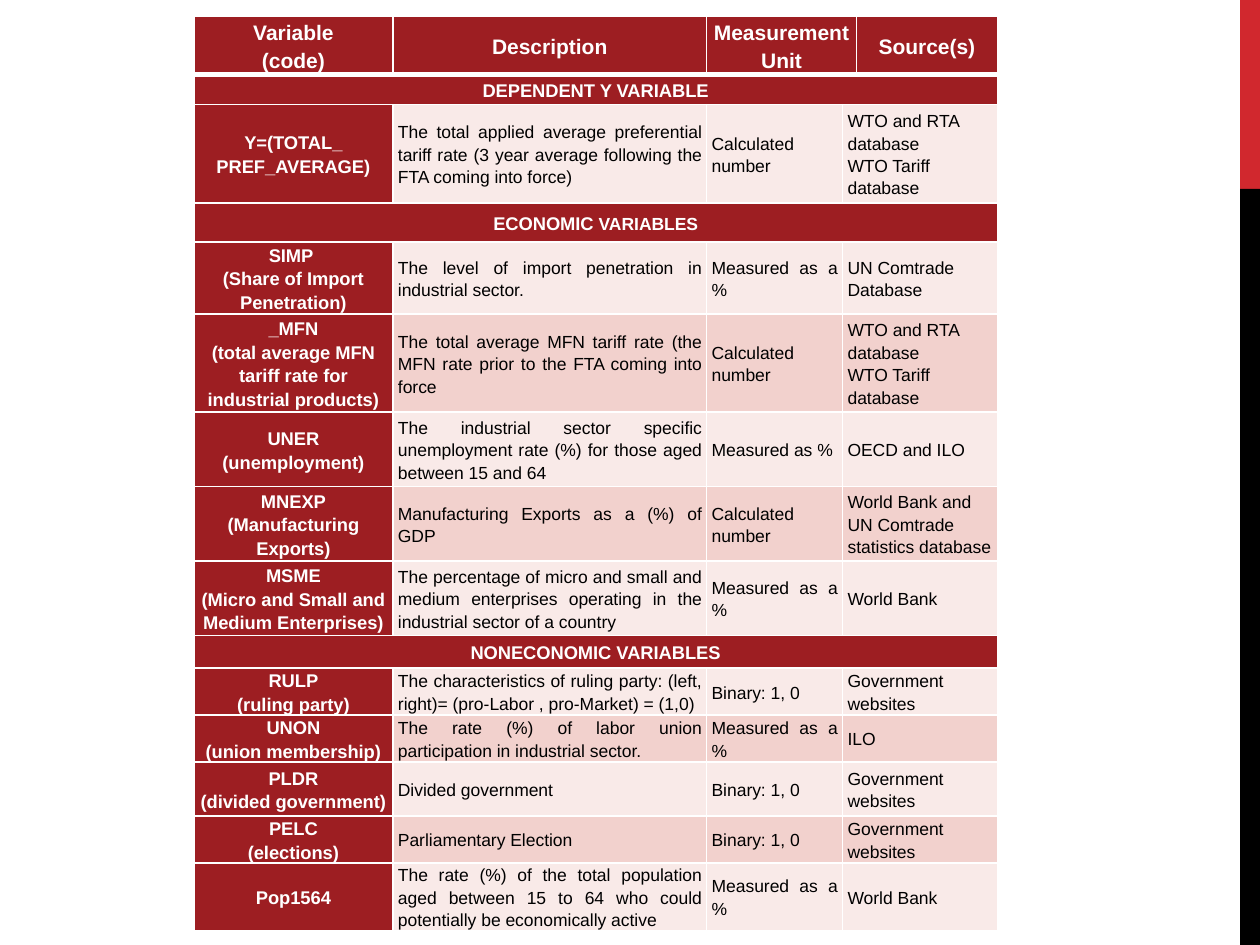
from lxml.etree import SubElement
from pptx import Presentation
from pptx.dml.color import RGBColor
from pptx.enum.shapes import MSO_SHAPE as Shape
from pptx.enum.text import MSO_ANCHOR as Anchor, PP_ALIGN as Align
from pptx.oxml.ns import qn
from pptx.util import Cm, Pt

WHITE, BLACK, RED, DARK_RED = "FFFFFF", "000000", "D1282E", "9D1E22"
BANDS = ("F9EAE8", "F2D1CD")
COLUMN_WIDTHS = (4.01, 6.32, 2.74, 0.28, 2.84)
HEADINGS = ("Variable\n(code)", "Description", "Measurement\nUnit", "Source(s)")
TRADE_SOURCES = "WTO and RTA database\nWTO Tariff database"
SECTIONS = (
    (0.61, (("DEPENDENT Y VARIABLE", 10.5),), (
        (1.98, "Y=(TOTAL_\nPREF_AVERAGE)",
         "The total applied average preferential tariff rate (3 year average following the FTA coming into force)",
         "Calculated number", TRADE_SOURCES),
    )),
    (0.79, (("ECONOMIC", 10.5), (" VARIABLES", 10)), (
        (1.45, "SIMP \n(Share of Import Penetration)",
         "The level of import penetration in industrial sector.",
         "Measured as a %", "UN Comtrade Database"),
        (1.98, "_MFN\n(total average MFN tariff rate for industrial products)",
         "The total average MFN tariff rate (the MFN rate prior to the FTA coming into force",
         "Calculated number", TRADE_SOURCES),
        (1.5, "UNER\n(unemployment)",
         "The industrial sector specific unemployment rate (%) for those aged between 15 and 64",
         "Measured as %", "OECD and ILO"),
        (1.5, "MNEXP\n(Manufacturing Exports)",
         "Manufacturing Exports as a (%) of GDP",
         "Calculated number", "World Bank and UN Comtrade statistics database"),
        (1.5, "MSME\n(Micro and Small and Medium Enterprises)",
         "The percentage of micro and small and medium enterprises operating in the industrial sector of a country",
         "Measured as a %", "World Bank"),
    )),
    (0.66, (("NONECONOMIC VARIABLES", 10.5),), (
        (0.94, "RULP\n(ruling party)",
         "The characteristics of ruling party: (left, right)= (pro-Labor , pro-Market) = (1,0)",
         "Binary: 1, 0", "Government websites"),
        (0.94, "UNON\n(union membership)",
         "The rate (%) of labor union participation in industrial sector.",
         "Measured as a %", "ILO"),
        (1.09, "PLDR\n(divided government)", "Divided government",
         "Binary: 1, 0", "Government websites"),
        (0.94, "PELC\n(elections)", "Parliamentary Election",
         "Binary: 1, 0", "Government websites"),
        (1.32, "Pop1564",
         "The rate (%) of the total population aged between 15 to 64 who could potentially be economically active",
         "Measured as a %", "World Bank"),
    )),
)


def color(value):
    """Turn a hex string into a colour."""
    return RGBColor.from_string(value)


def set_font(font, size, ink, bold):
    """Apply the table's typeface with the given look."""
    font.name, font.size, font.bold = "Arial", Pt(size), bold
    font.color.rgb = color(ink)


def add_borders(cell, top=1, bottom=1):
    """Draw white rules around a cell, with widths in points."""
    properties = cell._tc.get_or_add_tcPr()
    for index, (side, width) in enumerate((("L", 1), ("R", 1), ("T", top), ("B", bottom))):
        rule = properties.makeelement(qn(f"a:ln{side}"), {"w": str(Pt(width))})
        fill = SubElement(rule, qn("a:solidFill"))
        SubElement(fill, qn("a:srgbClr"), val=WHITE)
        properties.insert(index, rule)


def write_cell(cell, lines, fill, align, ink=WHITE, bold=True):
    """Fill a cell with paragraphs, each one a sequence of (text, size) runs."""
    cell.fill.solid()
    cell.fill.fore_color.rgb = color(fill)
    cell.vertical_anchor = Anchor.MIDDLE
    cell.margin_left = cell.margin_right = Cm(0.1)
    cell.margin_top = cell.margin_bottom = 0
    frame = cell.text_frame
    for index, runs in enumerate(lines):
        paragraph = frame.add_paragraph() if index else frame.paragraphs[0]
        paragraph.alignment, paragraph.line_spacing = align, 1.15
        set_font(paragraph.font, runs[0][1], ink, bold)
        for text, size in runs:
            run = paragraph.add_run()
            run.text = text
            if size != runs[0][1]:
                run.font.size = Pt(size)


def as_lines(text, size):
    """Split text into one-run paragraphs of one size."""
    return [((line, size),) for line in text.split("\n")]


def add_variable_table(slide, left, top, width):
    """Place the table of variables, grouped into sections."""
    row_count = 1 + sum(1 + len(variables) for _, _, variables in SECTIONS)
    frame = slide.shapes.add_table(row_count, len(COLUMN_WIDTHS), left, top, width, Cm(18.4))
    table = frame.table
    for column, share in zip(table.columns, COLUMN_WIDTHS):
        column.width = int(width * share / sum(COLUMN_WIDTHS))
    for row in range(row_count):
        for column in range(len(COLUMN_WIDTHS)):
            add_borders(table.cell(row, column), 3 if row == 1 else 1, 3 if row == 0 else 1)

    table.rows[0].height = Cm(1.17)
    table.cell(0, 2).merge(table.cell(0, 3))
    for column, heading in zip((0, 1, 2, 4), HEADINGS):
        write_cell(table.cell(0, column), as_lines(heading, 12), DARK_RED, Align.CENTER)

    row = 1
    for section_height, title, variables in SECTIONS:
        table.rows[row].height = Cm(section_height)
        table.cell(row, 0).merge(table.cell(row, 4))
        write_cell(table.cell(row, 0), [title], DARK_RED, Align.CENTER)
        row += 1
        for index, (height, code, description, unit, source) in enumerate(variables):
            table.rows[row].height = Cm(height)
            table.cell(row, 3).merge(table.cell(row, 4))
            write_cell(table.cell(row, 0), as_lines(code, 10.5), DARK_RED, Align.CENTER)
            details = ((description, Align.JUSTIFY), (unit, Align.JUSTIFY), (source, Align.LEFT))
            for column, (text, align) in enumerate(details, 1):
                write_cell(table.cell(row, column), as_lines(text, 10),
                           BANDS[index % 2], align, BLACK, False)
            row += 1


def add_side_bar(slide, left, top, width, height):
    """Place the two-colour bar, its upper fifth in red."""
    red_height = height // 5
    for y, part_height, fill in ((top, red_height, RED),
                                 (top + red_height, height - red_height, BLACK)):
        bar = slide.shapes.add_shape(Shape.RECTANGLE, left, y, width, part_height)
        bar.shadow.inherit = False
        bar.fill.solid()
        bar.fill.fore_color.rgb = color(fill)
        bar.line.fill.background()


def main():
    """Build and save the slide."""
    deck = Presentation()
    deck.slide_width, deck.slide_height = Cm(25.4), Cm(19.05)
    slide = deck.slides.add_slide(deck.slide_layouts[6])
    bar_width = Cm(0.4)
    add_side_bar(slide, deck.slide_width - bar_width, 0, bar_width, deck.slide_height)
    add_variable_table(slide, Cm(3.91), Cm(0.33), Cm(16.2))
    deck.save("out.pptx")


if __name__ == "__main__":
    main()
